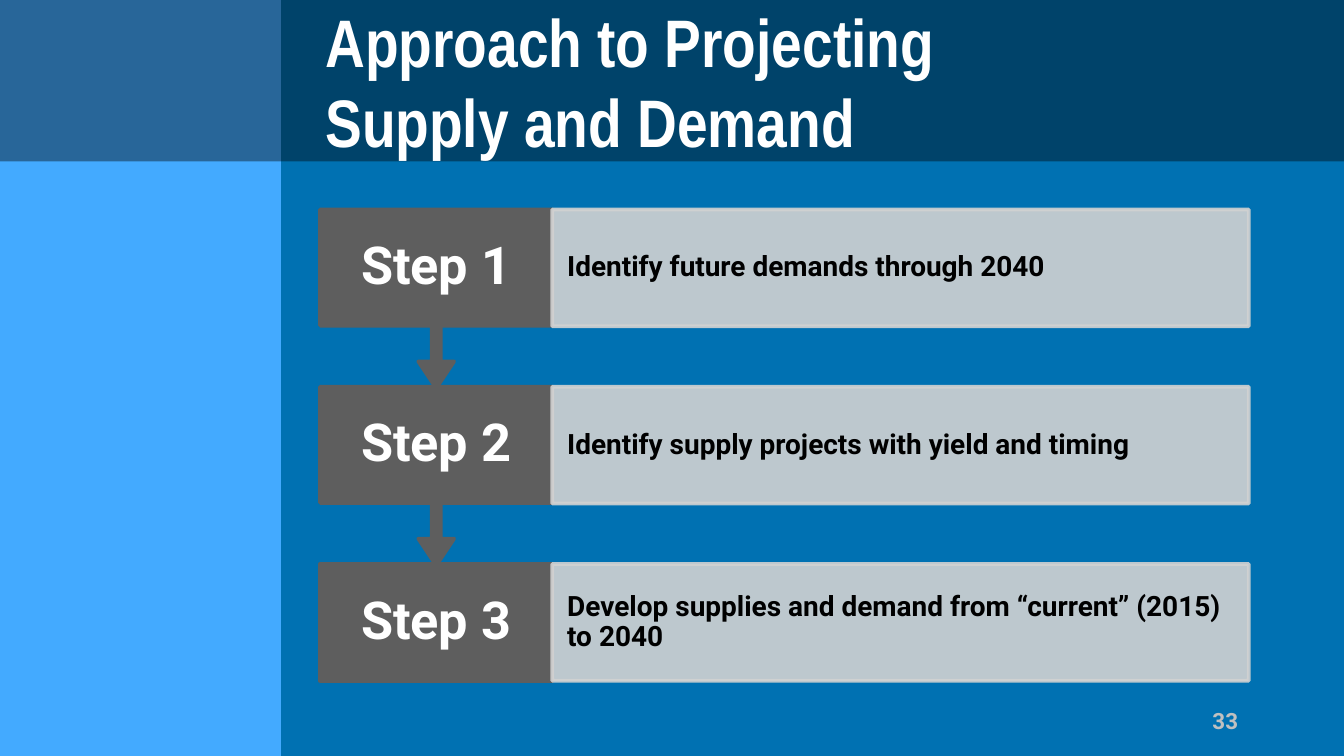
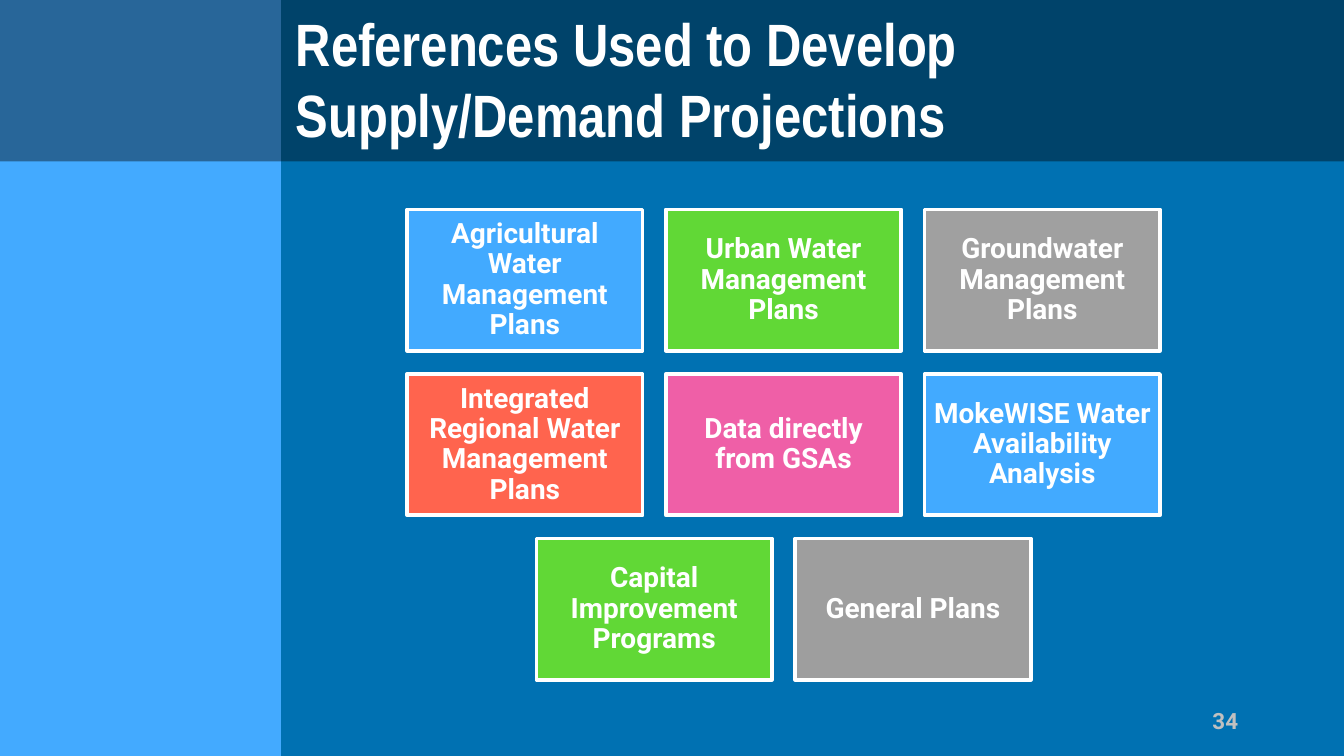
import pptx
import pptx.dml.color
import pptx.enum.shapes
import pptx.enum.text
import pptx.oxml.ns
import pptx.util
from lxml import etree
from pptx.util import Cm

COLOURS = {
    "background": "0071B2", "side": "43AAFF", "black": "000000",
    "white": "FFFFFF", "number": "C0C0C0", "step": "5E5E5E",
    "detail": "D2D2D2", "blue": "42AAFF", "green": "61D836",
    "grey": "A0A0A0", "dark_grey": "9E9E9E", "red": "FF644E",
    "pink": "EF5FA7",
}
SLIDE_WIDTH, SLIDE_HEIGHT = 25.4, 14.29
SIDE_WIDTH, BAND_HEIGHT = 5.31, 3.05

SHAPES = pptx.enum.shapes.MSO_SHAPE
ALIGN = pptx.enum.text.PP_ALIGN
ANCHOR = pptx.enum.text.MSO_ANCHOR

STEPS = [
    ("Step 1", "Identify future demands through 2040"),
    ("Step 2", "Identify supply projects with yield and timing"),
    ("Step 3", "Develop supplies and demand from “current” (2015) to 2040"),
]
REFERENCE_ROWS = [
    [("Agricultural Water Management Plans", "blue"),
     ("Urban Water Management Plans", "green"),
     ("Groundwater Management Plans", "grey")],
    [("Integrated Regional Water Management Plans", "red"),
     ("Data directly from GSAs", "pink"),
     ("MokeWISE Water Availability Analysis", "blue")],
    [("Capital Improvement Programs", "green"),
     ("General Plans", "dark_grey")],
]


def paint(fill, colour, opacity=100):
    """Set a solid fill, optionally see-through."""
    fill.solid()
    fill.fore_color.rgb = pptx.dml.color.RGBColor.from_string(COLOURS[colour])
    if opacity < 100:
        tag = pptx.oxml.ns.qn("a:srgbClr")
        for element in fill._xPr.iter(tag):
            if element.getparent().getparent() is fill._xPr:
                alpha = etree.SubElement(element, pptx.oxml.ns.qn("a:alpha"))
                alpha.set("val", str(opacity * 1000))


def write(shape, text, size, colour="white", font="Roboto", align=ALIGN.LEFT,
          anchor=ANCHOR.MIDDLE, spacing=None, insets=(0.25, 0.13)):
    """Put one bold paragraph in a shape; insets are horizontal, vertical."""
    frame = shape.text_frame
    frame.word_wrap = True
    frame.vertical_anchor = anchor
    frame.margin_left = frame.margin_right = Cm(insets[0])
    frame.margin_top = frame.margin_bottom = Cm(insets[1])
    paragraph = frame.paragraphs[0]
    paragraph.alignment = align
    if spacing:
        paragraph.line_spacing = spacing
    run = paragraph.add_run()
    run.text = text
    run.font.name = font
    run.font.size = pptx.util.Pt(size)
    run.font.bold = True
    run.font.color.rgb = pptx.dml.color.RGBColor.from_string(COLOURS[colour])


def add_box(slide, box, fill, line=None, opacity=100, kind=SHAPES.RECTANGLE):
    shape = slide.shapes.add_shape(kind, *map(Cm, box))
    shape.shadow.inherit = False
    paint(shape.fill, fill, opacity)
    if line:
        shape.line.width = pptx.util.Pt(2)
        paint(shape.line.fill, line, opacity)
    else:
        shape.line.fill.background()
    return shape


def add_text(slide, box, text, size, **text_format):
    write(slide.shapes.add_textbox(*map(Cm, box)), text, size, **text_format)


def add_base_slide(presentation, title, title_box, title_size, number):
    """Add a slide with the shared bands, its title and its number."""
    slide = presentation.slides.add_slide(presentation.slide_layouts[6])
    paint(slide.background.fill, "background")
    add_box(slide, (0, 0, SIDE_WIDTH, SLIDE_HEIGHT), "side")
    add_box(slide, (0, 0, SLIDE_WIDTH, BAND_HEIGHT), "black", opacity=40)
    add_text(slide, title_box, title, title_size, font="Arial Narrow",
             insets=(0.1, 0.05))
    add_text(slide, (17.93, 13.23, 5.72, 0.76), str(number), 12,
             colour="number", align=ALIGN.RIGHT, anchor=ANCHOR.TOP)
    return slide


def add_steps(slide):
    left, top, label_width, detail_width = 6.05, 3.96, 4.39, 13.16
    height, pitch, callout_height = 2.21, 3.35, 3.38
    # Last step first, so that each arrow lies over the step below it
    for index, (label, detail) in reversed(list(enumerate(STEPS))):
        y = top + index * pitch
        if index == len(STEPS) - 1:
            step = add_box(slide, (left, y, label_width, height),
                           "step", line="step")
        else:
            step = add_box(slide, (left, y, label_width, callout_height),
                           "step", line="step", kind=SHAPES.DOWN_ARROW_CALLOUT)
            for position, value in enumerate((0.05, 0.1, 0.15, 0.65)):
                step.adjustments[position] = value
        write(step, label, 28, align=ALIGN.CENTER, spacing=0.9,
              insets=(0.3, 0.56))
        panel = add_box(slide, (left + label_width, y, detail_width, height),
                        "detail", line="detail", opacity=90)
        write(panel, detail, 15, colour="black", spacing=0.9,
              insets=(0.28, 0.53))


def add_references(slide):
    centre, top, width, height, gap = 14.81, 3.96, 4.45, 2.67, 0.44
    for row_index, row in enumerate(REFERENCE_ROWS):
        left = centre - (len(row) * (width + gap) - gap) / 2
        for column, (name, colour) in enumerate(row):
            tile = add_box(slide, (left + column * (width + gap),
                                   top + row_index * (height + gap),
                                   width, height), colour, line="white")
            write(tile, name, 15, align=ALIGN.CENTER, spacing=0.9,
                  insets=(0.15, 0.15))


def main():
    presentation = pptx.Presentation()
    presentation.slide_width = Cm(SLIDE_WIDTH)
    presentation.slide_height = Cm(SLIDE_HEIGHT)

    # Three steps
    slide = add_base_slide(presentation,
                           "Approach to Projecting Supply and Demand",
                           (6.05, 0.33, 12.01, 2.39), 36, 33)
    add_steps(slide)

    # Reference tiles
    slide = add_base_slide(presentation,
                           "References Used to Develop Supply/Demand Projections",
                           (5.49, 0.28, 14.86, 2.39), 32, 34)
    add_references(slide)

    presentation.save("out.pptx")


if __name__ == "__main__":
    main()
